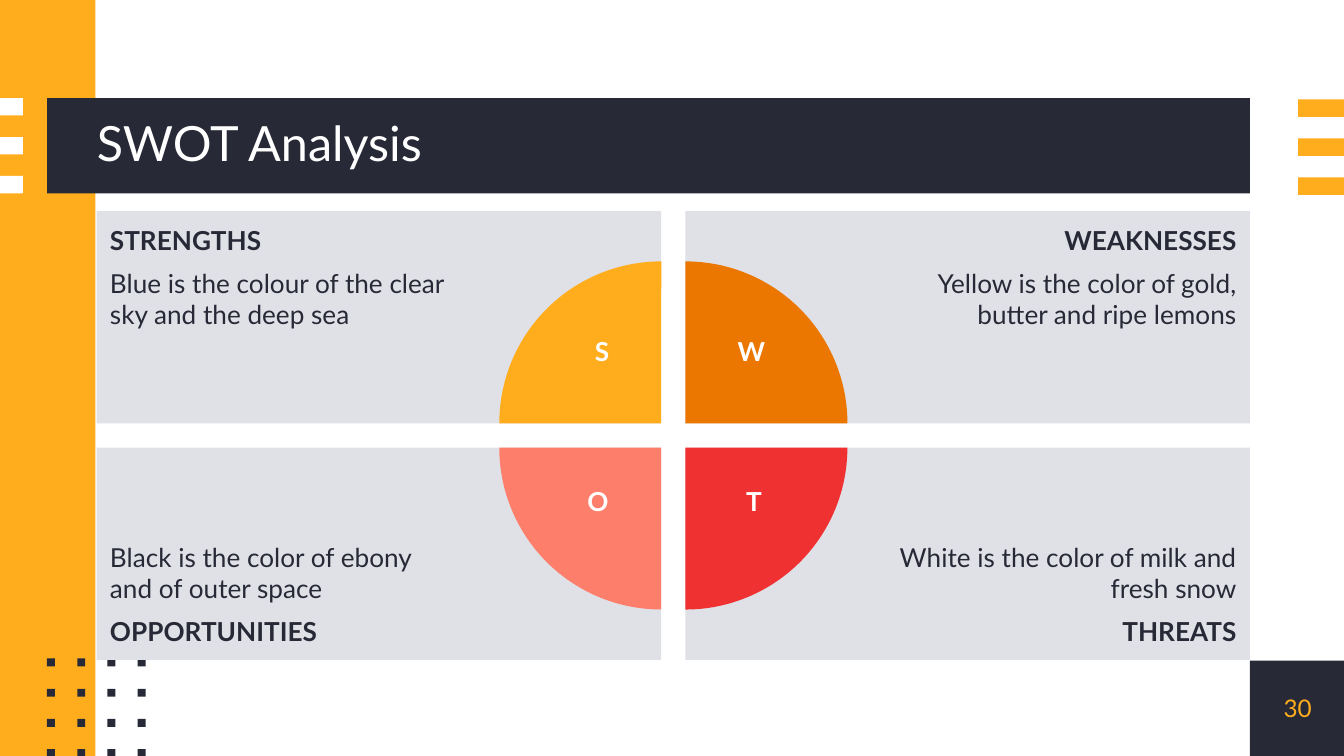
from itertools import product

from pptx import Presentation
from pptx.dml.color import RGBColor
from pptx.enum.shapes import MSO_SHAPE as Shape
from pptx.enum.text import MSO_ANCHOR as Anchor, PP_ALIGN as Align
from pptx.util import Inches, Pt

NAVY = RGBColor(0x27, 0x2A, 0x36)
AMBER = RGBColor(0xFF, 0xAD, 0x1D)
ORANGE = RGBColor(0xEB, 0x77, 0x00)
RED = RGBColor(0xF0, 0x31, 0x31)
CORAL = RGBColor(0xFD, 0x7E, 0x6B)
GREY = RGBColor(0xE0, 0xE0, 0xE7)
WHITE = RGBColor(0xFF, 0xFF, 0xFF)

WIDTH = 10
HEIGHT = WIDTH * 9 / 16
BAND = 0.71
BAND_TOP = 0.73
DOT_STEP = HEIGHT / 25
CORNER = (9.3, HEIGHT - BAND, BAND, BAND)
GRID_LEFT, GRID_TOP = 0.72, 1.57
PANEL_W, PANEL_H = 4.2, 1.58
GAP = 0.18
PIE = 2.41
LETTER_W, LETTER_H = 0.51, 0.44

QUADRANTS = [
    (0, 0, "S", 4.48, AMBER, "STRENGTHS",
     "Blue is the colour of the clear sky and the deep sea"),
    (1, 0, "W", 5.59, ORANGE, "WEAKNESSES",
     "Yellow is the color of gold, butter and ripe lemons"),
    (1, 1, "T", 5.61, RED, "THREATS",
     "White is the color of milk and fresh snow"),
    (0, 1, "O", 4.45, CORAL, "OPPORTUNITIES",
     "Black is the color of ebony and of outer space"),
]


def add_filled(slide, kind, box, color):
    """Add a borderless preset shape filled with one colour."""
    shape = slide.shapes.add_shape(kind, *map(Inches, box))
    shape.shadow.inherit = False
    shape.fill.solid()
    shape.fill.fore_color.rgb = color
    shape.line.fill.background()
    return shape


def set_frame(frame, insets, anchor):
    """Set wrapping, anchor and left, top, right, bottom insets."""
    frame.word_wrap = True
    frame.vertical_anchor = anchor
    (frame.margin_left, frame.margin_top,
     frame.margin_right, frame.margin_bottom) = map(Inches, insets)


def add_run(paragraph, text, size, color, bold=False):
    """Add one formatted run to a paragraph."""
    run = paragraph.add_run()
    run.text = text
    run.font.name = "Lato"
    run.font.size = Pt(size)
    run.font.bold = bold
    run.font.color.rgb = color


def add_label(slide, box, text, size, color, insets, anchor, bold=False):
    """Add a centred one-line text box."""
    frame = slide.shapes.add_textbox(*map(Inches, box)).text_frame
    set_frame(frame, insets, anchor)
    paragraph = frame.paragraphs[0]
    paragraph.alignment = Align.CENTER
    add_run(paragraph, text, size, color, bold)


def add_decor(slide):
    """Add the side band, title bar, stripes, dots and page corner."""
    for box, color in [
        (CORNER, NAVY),
        ((0, 0, BAND, HEIGHT), AMBER),
        ((0.35, BAND_TOP, 8.95, BAND), NAVY),
    ]:
        add_filled(slide, Shape.RECTANGLE, box, color)
    for row in range(3):
        top = BAND_TOP + 0.29 * row
        add_filled(slide, Shape.RECTANGLE, (0, top, 0.17, 0.13), WHITE)
        add_filled(slide, Shape.RECTANGLE, (9.66, top + 0.01, 0.34, 0.13), AMBER)
    for column, row in product(range(4), repeat=2):
        dot = (0.35 + DOT_STEP * column, 4.9 + DOT_STEP * row, 0.06, 0.06)
        add_filled(slide, Shape.RECTANGLE, dot, NAVY)


def add_title(slide, text):
    """Place the title placeholder over the title bar."""
    title = slide.shapes.title
    title.left, title.top, title.width, title.height = map(
        Inches, (GRID_LEFT, BAND_TOP, 8.58, BAND))
    set_frame(title.text_frame, (0, 0, 0, 0), Anchor.MIDDLE)
    paragraph = title.text_frame.paragraphs[0]
    paragraph.alignment = Align.LEFT
    paragraph.line_spacing = 0.9
    add_run(paragraph, text, 26, WHITE)
    title.element.getparent().append(title.element)


def add_panel(slide, column, row, heading, body):
    """Add a grey panel whose heading sits on its outer edge."""
    box = (GRID_LEFT + column * (PANEL_W + GAP),
           GRID_TOP + row * (PANEL_H + GAP), PANEL_W, PANEL_H)
    frame = add_filled(slide, Shape.RECTANGLE, box, GREY).text_frame
    insets = (1.5, 0.1, 0.1, 0.1) if column else (0.1, 0.1, 1.5, 0.1)
    set_frame(frame, insets, Anchor.BOTTOM if row else Anchor.TOP)
    lines = [(heading, True), (body, False)]
    if row:
        lines.reverse()
    first, last = frame.paragraphs[0], frame.add_paragraph()
    last.space_before = last.space_after = Pt(6)
    for paragraph, (text, bold) in zip((first, last), lines):
        paragraph.alignment = Align.RIGHT if column else Align.LEFT
        add_run(paragraph, text, 14, NAVY, bold)


def add_quarter(slide, column, row, color, turn):
    """Add a quarter pie centred on the panel's inner corner."""
    center_x = GRID_LEFT + PANEL_W + column * GAP
    center_y = GRID_TOP + PANEL_H + row * GAP
    box = (center_x - PIE / 2, center_y - PIE / 2, PIE, PIE)
    quarter = add_filled(slide, Shape.PIE, box, color)
    quarter.adjustments[0], quarter.adjustments[1] = 108, 162
    quarter.rotation = turn


def add_letter(slide, row, letter, center_x):
    """Add the white initial on its quarter pie."""
    box = (center_x - LETTER_W / 2, 2.45 + 1.11 * row, LETTER_W, LETTER_H)
    add_label(slide, box, letter, 14, WHITE, (0.1, 0.05, 0.1, 0.05),
              Anchor.TOP, bold=True)


def main():
    """Build the SWOT slide and save it."""
    deck = Presentation()
    deck.slide_width, deck.slide_height = Inches(WIDTH), Inches(HEIGHT)
    slide = deck.slides.add_slide(deck.slide_layouts.get_by_name("Title Only"))
    add_decor(slide)
    add_title(slide, "SWOT Analysis")
    add_label(slide, CORNER, "30", 13, AMBER, (0, 0, 0, 0), Anchor.MIDDLE)
    for column, row, _, _, _, heading, body in QUADRANTS:
        add_panel(slide, column, row, heading, body)
    for index, (column, row, _, _, color, _, _) in enumerate(QUADRANTS):
        add_quarter(slide, column, row, color, 90 * index)
    for _, row, letter, center_x, *_ in QUADRANTS:
        add_letter(slide, row, letter, center_x)
    deck.save("out.pptx")


if __name__ == "__main__":
    main()
